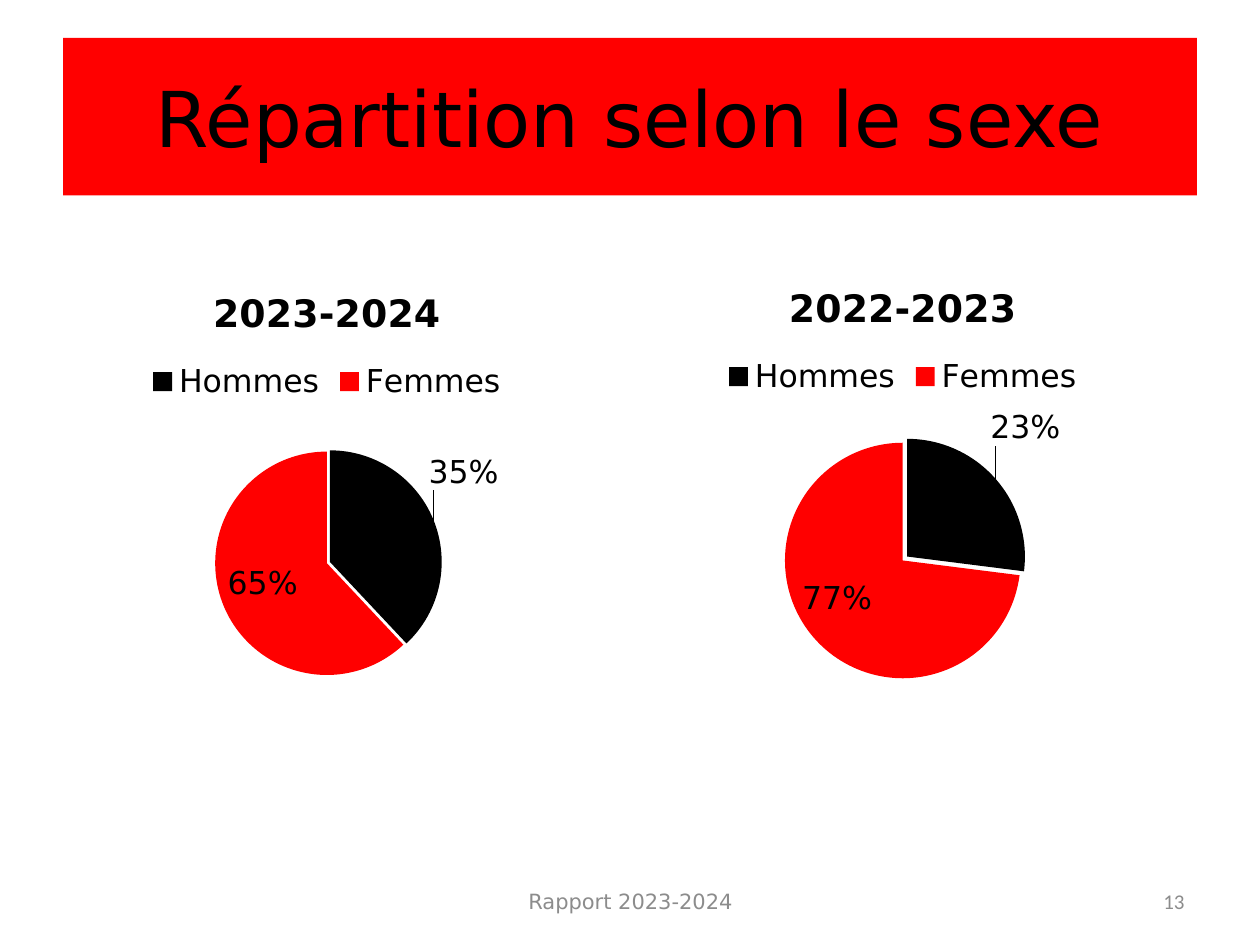
from pptx import Presentation
from pptx.chart.data import CategoryChartData
from pptx.dml.color import RGBColor
from pptx.enum.chart import XL_CHART_TYPE as Kind, XL_LABEL_POSITION as Spot, XL_LEGEND_POSITION as Side
from pptx.enum.text import MSO_ANCHOR as Anchor, PP_ALIGN as Align
from pptx.oxml import parse_xml
from pptx.oxml.ns import nsdecls
from pptx.util import Inches, Pt

FACE = "DejaVu Sans"
TITLE = "Répartition selon le sexe"
GROUPS = ["Hommes", "Femmes"]
HUES = ["000000", "FF0000"]
SPOTS = [Spot.OUTSIDE_END, Spot.CENTER]
PIES = [
    {"year": "2022-2023", "box": (5.04, 2.06, 4.25, 3.62), "vals": (27, 73),
     "tags": ("23%", "77%"), "plot": (0.28, 0.4, 0.44, 0.52), "burst": 5,
     "shifts": ((-0.02, -0.06), (-0.04, 0))},
    {"year": "2023-2024", "box": (0.98, 2.1, 3.23, 3.62), "vals": (38, 62),
     "tags": ("35%", "65%"), "plot": (0.22, 0.41, 0.56, 0.49), "burst": 3,
     "shifts": ((-0.03, -0.06), (-0.03, 0))},
]
NOTES = [
    ("Rapport 2023-2024", (3.42, 6.95, 3.17, 0.4), Align.CENTER, FACE),
    ("13", (7.17, 6.95, 2.33, 0.4), Align.RIGHT, "Calibri"),
]


def place(box):
    return [Inches(n) for n in box]


def style(font, size, hue="000000", face=FACE, bold=False):
    font.size, font.name, font.bold = Pt(size), face, bold
    font.color.rgb = RGBColor.from_string(hue)


def paint(fill, hue):
    fill.solid()
    fill.fore_color.rgb = RGBColor.from_string(hue)


def layout(pos, inner=False):
    tags = '<c:layoutTarget val="inner"/><c:xMode val="edge"/><c:yMode val="edge"/>' if inner else ""
    tags += "".join(f'<c:{k} val="{v}"/>' for k, v in zip("xywh", pos))
    return parse_xml(f'<c:layout {nsdecls("c")}><c:manualLayout>{tags}</c:manualLayout></c:layout>')


def add_pie(slide, pie):
    data = CategoryChartData()
    data.categories = GROUPS
    data.add_series("Series 1", pie["vals"])
    chart = slide.shapes.add_chart(Kind.PIE, *place(pie["box"]), data).chart
    style(chart.font, 18)
    chart.has_title = True
    head = chart.chart_title.text_frame
    head.text = pie["year"]
    style(head.paragraphs[0].font, 21.6, bold=True)
    chart.has_legend = True
    chart.legend.position = Side.TOP
    chart.legend.include_in_layout = False
    style(chart.legend.font, 18)
    area = chart._chartSpace.chart.plotArea
    for old in area.findall("{*}layout"):
        area.remove(old)
    area.insert(0, layout(pie["plot"], True))
    plot = chart.plots[0]
    plot.vary_by_categories = True
    plot.has_data_labels = True
    plot.data_labels.show_percentage = True
    plot.data_labels.show_value = False
    ser = plot.series[0]
    for i, (hue, tag, spot, shift) in enumerate(zip(HUES, pie["tags"], SPOTS, pie["shifts"])):
        point = ser.points[i]
        paint(point.format.fill, hue)
        label = point.data_label
        label.text_frame.text = tag
        style(label.text_frame.paragraphs[0].runs[0].font, 18)
        label.position = spot
        label._dLbl.insert(1, layout(shift))
    burst = parse_xml(f'<c:explosion {nsdecls("c")} val="{pie["burst"]}"/>')
    ser.points[0].format.fill._xPr.addprevious(burst)


def add_note(slide, text, box, align, face):
    frame = slide.shapes.add_textbox(*place(box)).text_frame
    frame.word_wrap = True
    frame.vertical_anchor = Anchor.MIDDLE
    frame.text = text
    para = frame.paragraphs[0]
    para.alignment = align
    style(para.font, 12, "8C8C8C", face)


def main():
    """Build the slide on the split by sex."""
    deck = Presentation()
    deck.slide_width, deck.slide_height = Inches(10), Inches(7.5)
    slide = deck.slides.add_slide(deck.slide_layouts[5])
    title = slide.shapes.title
    title.left, title.top, title.width, title.height = place((0.5, 0.3, 9, 1.25))
    paint(title.fill, "FF0000")
    title.text = TITLE
    title.text_frame.vertical_anchor = Anchor.MIDDLE
    para = title.text_frame.paragraphs[0]
    para.alignment = Align.CENTER
    style(para.font, 44)
    for pie in PIES:
        add_pie(slide, pie)
    for note in NOTES:
        add_note(slide, *note)
    deck.save("out.pptx")


if __name__ == "__main__":
    main()
